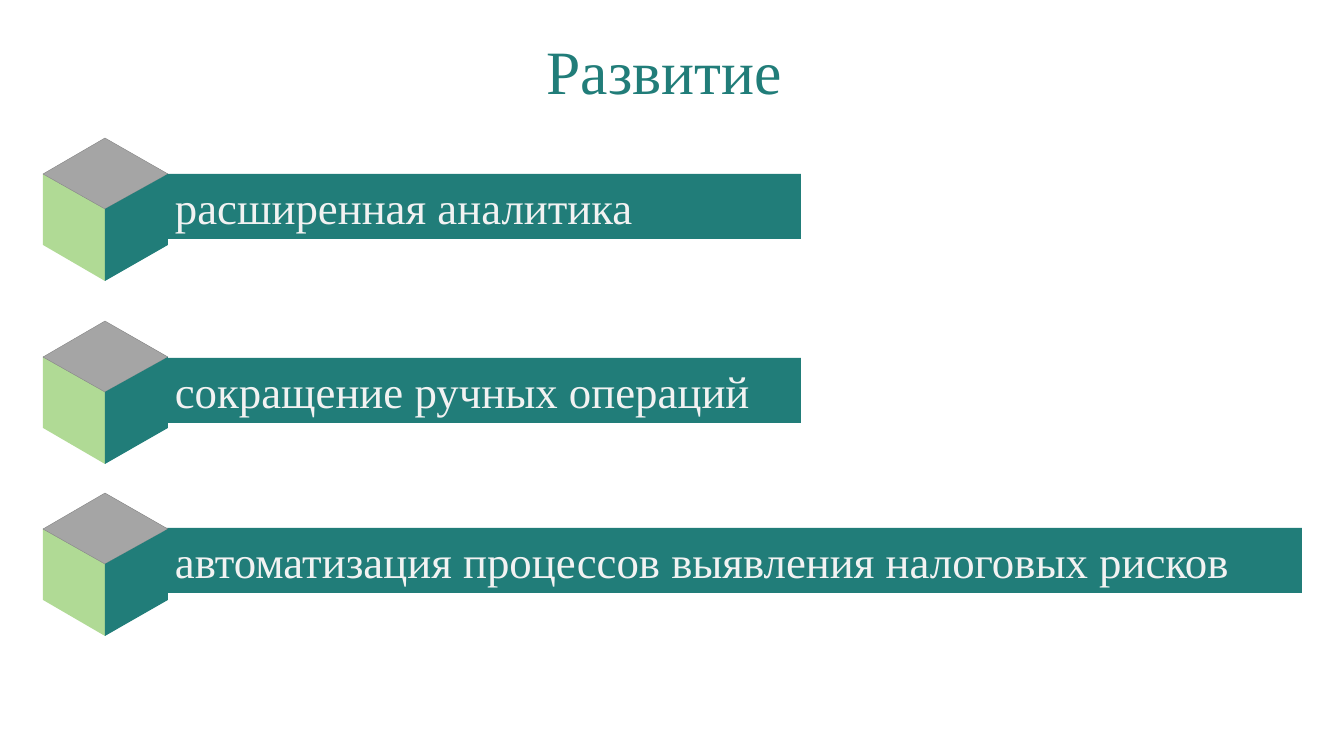
from pptx import Presentation
from pptx.dml.color import RGBColor
from pptx.enum.shapes import MSO_SHAPE
from pptx.enum.text import MSO_ANCHOR, MSO_AUTO_SIZE, PP_ALIGN
from pptx.util import Emu, Pt

PX = 9071.43  # EMU per px, at 100.8 px to the inch
COLOURS = {
    "teal": "217D79",
    "green": "B0DA95",
    "grey": "A5A5A5",
    "edge": "7F7F7F",
    "pale": "F2F2F2",
}

# Cube faces as px offsets from the cube's top left corner
CUBE_FACES = {
    "green": [(0, 36), (62, 71), (62, 143), (0, 107)],
    "grey": [(62, 0), (125, 36), (62, 71), (0, 36)],
    "teal": [(62, 71), (125, 36), (125, 107), (62, 143)],
}
CUBE_LEFT, BAR_LEFT, BAR_HEIGHT = 43, 165, 65

# Text, cube top, bar top, bar width
DIRECTIONS = [
    ("расширенная аналитика", 138, 174, 636),
    ("сокращение ручных операций", 321, 358, 636),
    ("автоматизация процессов выявления налоговых рисков", 493, 528, 1137),
]


def px(*lengths):
    return [Emu(round(length * PX)) for length in lengths]


def write(shape, text, size, colour, align):
    frame = shape.text_frame
    frame.text = text
    frame_format = {
        "word_wrap": True,
        "auto_size": MSO_AUTO_SIZE.NONE,
        "vertical_anchor": MSO_ANCHOR.MIDDLE,
    }
    for name, value in frame_format.items():
        setattr(frame, name, value)
    paragraph = frame.paragraphs[0]
    paragraph.alignment = align
    font = paragraph.runs[0].font
    for name, value in {"name": "Times New Roman", "size": Pt(size)}.items():
        setattr(font, name, value)
    font.color.rgb = RGBColor.from_string(COLOURS[colour])


deck = Presentation()
deck.slide_width, deck.slide_height = px(1344, 756)
slide = deck.slides.add_slide(deck.slide_layouts[5])

heading = slide.shapes.title
heading.left, heading.top, heading.width, heading.height = px(165, 42, 1014, 65)
write(heading, "Развитие ", 44, "teal", PP_ALIGN.CENTER)
heading.text_frame.paragraphs[0].line_spacing = 0.9

for direction, cube_top, bar_top, bar_width in DIRECTIONS:
    bar = slide.shapes.add_shape(
        MSO_SHAPE.RECTANGLE, *px(BAR_LEFT, bar_top, bar_width, BAR_HEIGHT)
    )
    bar.shadow.inherit = False
    bar.fill.solid()
    bar.fill.fore_color.rgb = RGBColor.from_string(COLOURS["teal"])
    bar.line.fill.background()
    write(bar, direction, 32, "pale", PP_ALIGN.LEFT)

    cube = slide.shapes.add_group_shape()
    for colour, offsets in CUBE_FACES.items():
        corners = [(CUBE_LEFT + x, cube_top + y) for x, y in offsets]
        outline = cube.shapes.build_freeform(*corners[0], scale=PX)
        outline.add_line_segments(corners[1:], close=True)
        face = outline.convert_to_shape()
        face.shadow.inherit = False
        face.fill.solid()
        face.fill.fore_color.rgb = RGBColor.from_string(COLOURS[colour])
        if colour == "grey":
            face.line.width = Pt(0.25)
            face.line.color.rgb = RGBColor.from_string(COLOURS["edge"])
        else:
            face.line.fill.background()

deck.save("out.pptx")
